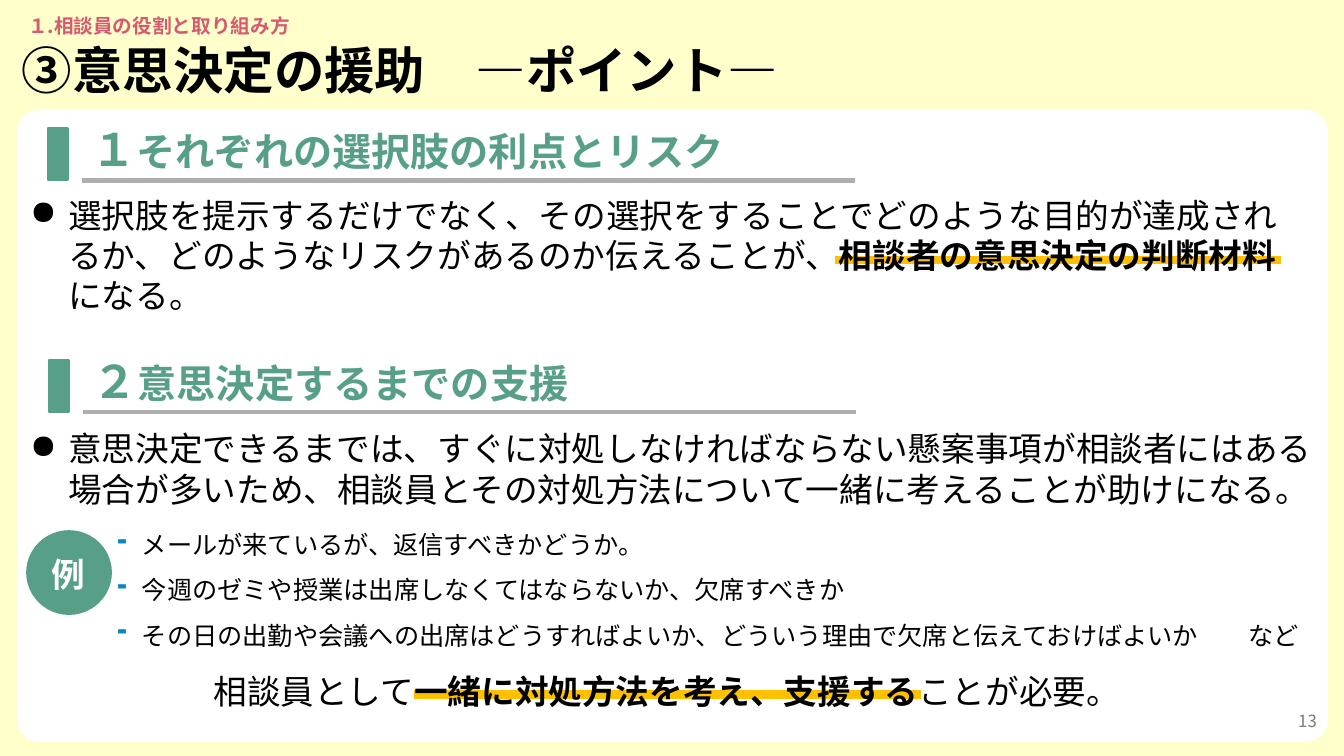
from lxml import etree
from pptx import Presentation
from pptx.dml.color import RGBColor
from pptx.enum.shapes import MSO_CONNECTOR, MSO_SHAPE
from pptx.enum.text import MSO_ANCHOR, MSO_AUTO_SIZE, PP_ALIGN
from pptx.oxml.ns import qn
from pptx.util import Inches, Pt

FONT = "Noto Sans CJK JP"
COLORS = {
    "cream": "FFFFCC", "white": "FFFFFF", "black": "000000", "rose": "D5596F",
    "green": "589F89", "rule": "AEAEAE", "marker": "FFC000", "dash": "0487BA",
    "number": "797979",
}
BODY_LEFT = 0.2
SECTION_GAP = 2.3
SECTION_TOP = 1.16
EXAMPLES = [
    "メールが来ているが、返信すべきかどうか。",
    "今週のゼミや授業は出席しなくてはならないか、欠席すべきか",
    "その日の出勤や会議への出席はどうすればよいか、どういう理由で欠席と伝えておけばよいか\tなど",
]


def color(name):
    return RGBColor.from_string(COLORS[name])


def style(paragraph, size, ink, bold=None):
    """Set the paragraph font, for East Asian glyphs too."""
    font = paragraph.font
    font.size, font.bold, font.name = Pt(size), bold, FONT
    font.color.rgb = color(ink)
    defaults = paragraph._p.pPr.find(qn("a:defRPr"))
    defaults.find(qn("a:latin")).addnext(
        defaults.makeelement(qn("a:ea"), {"typeface": FONT}))


def add_bullet(paragraph, char, indent, ink=None, tab=None):
    props = paragraph._p.get_or_add_pPr()
    props.set("marL", str(Inches(indent)))
    props.set("indent", str(-Inches(indent)))
    if ink:
        tint = etree.SubElement(props, qn("a:buClr"))
        etree.SubElement(tint, qn("a:srgbClr"), val=COLORS[ink])
    etree.SubElement(props, qn("a:buChar"), char=char)
    if tab:
        stops = etree.SubElement(props, qn("a:tabLst"))
        etree.SubElement(stops, qn("a:tab"), pos=str(Inches(tab)), algn="l")


def add_runs(paragraph, parts):
    """Write (text, bold) parts."""
    for text, bold in parts:
        run = paragraph.add_run()
        run.text = text
        if bold:
            run.font.bold = True


def add_text_frame(shapes, box, anchor=MSO_ANCHOR.TOP):
    frame = shapes.add_textbox(*map(Inches, box)).text_frame
    frame.word_wrap = True
    frame.auto_size = MSO_AUTO_SIZE.NONE
    frame.vertical_anchor = anchor
    return frame


def add_label(shapes, box, text, size, ink, bold=None,
              align=PP_ALIGN.LEFT, anchor=MSO_ANCHOR.TOP):
    paragraph = add_text_frame(shapes, box, anchor).paragraphs[0]
    paragraph.text = text
    paragraph.alignment = align
    style(paragraph, size, ink, bold)


def add_block(shapes, kind, box, fill):
    block = shapes.add_shape(kind, *map(Inches, box))
    block.shadow.inherit = False
    block.fill.solid()
    block.fill.fore_color.rgb = color(fill)
    block.line.color.rgb = color(fill)
    block.line.width = Pt(1.5)
    return block


def add_rule(shapes, left, right, y, ink, width):
    rule = shapes.add_connector(
        MSO_CONNECTOR.STRAIGHT, *map(Inches, (left, y, right, y)))
    rule.line.color.rgb = color(ink)
    rule.line.width = Pt(width)
    etree.SubElement(rule._element.spPr, qn("a:effectLst"))


def add_section_heading(slide, left, top, number, title):
    shapes = slide.shapes.add_group_shape().shapes
    height = 0.63
    frame = add_text_frame(shapes, (left, top, 7.21, height), MSO_ANCHOR.MIDDLE)
    frame.margin_left = Inches(0.43)
    heading = frame.paragraphs[0]
    add_runs(heading, [(number, False), (title, False)])
    heading.runs[0].font.size = Pt(32)
    style(heading, 28, "green", True)
    add_block(shapes, MSO_SHAPE.RECTANGLE, (left, top + 0.11, 0.19, 0.52), "green")
    add_rule(shapes, left + 0.33, left + 8, top + height, "rule", 3)


def add_body(slide, box, parts):
    paragraph = add_text_frame(slide.shapes, box).paragraphs[0]
    add_bullet(paragraph, "●", 0.38)
    add_runs(paragraph, parts)
    style(paragraph, 24, "black")


def add_header(slide, left, top):
    add_label(slide.shapes, (left, top + 0.25, 9.13, 0.71),
              "③意思決定の援助　―ポイント―", 36, "black", True)
    add_label(slide.shapes, (left + 0.06, top, 3.6, 0.34),
              "１.相談員の役割と取り組み方", 14, "rose", True)


def add_examples(slide, left, top):
    badge = slide.shapes.add_group_shape().shapes
    add_block(badge, MSO_SHAPE.OVAL, (left, top + 0.22, 0.83, 0.82), "green")
    add_label(badge, (left + 0.09, top + 0.4, 0.64, 0.5), "例", 24, "white",
              True, PP_ALIGN.CENTER)
    frame = add_text_frame(slide.shapes, (left + 0.73, top, 12.17, 1.43))
    for index, example in enumerate(EXAMPLES):
        paragraph = frame.add_paragraph() if index else frame.paragraphs[0]
        paragraph.text = example
        paragraph.line_spacing = 1.5
        add_bullet(paragraph, "╺", 0.31, "dash", 11.28 if "\t" in example else None)
        style(paragraph, 18, "black")


def add_conclusion(slide, left, top):
    add_rule(slide.shapes, left + 2.09, left + 7.11, top + 0.28, "marker", 6)
    paragraph = add_text_frame(slide.shapes, (left, top, 10.2, 0.5)).paragraphs[0]
    paragraph.alignment = PP_ALIGN.JUSTIFY
    paragraph.space_after = Pt(6)
    add_runs(paragraph, [("相談員として", False),
                         ("一緒に対処方法を考え、支援する", True),
                         ("ことが必要。", False)])
    style(paragraph, 24, "black")


def main():
    prs = Presentation()
    prs.slide_width, prs.slide_height = Inches(13.33), Inches(7.5)
    slide = prs.slides.add_slide(prs.slide_layouts[6])
    slide.background.fill.solid()
    slide.background.fill.fore_color.rgb = color("cream")

    panel = add_block(slide.shapes, MSO_SHAPE.ROUNDED_RECTANGLE,
                      (0.18, 1.1, 12.98, 6.25), "white")
    panel.adjustments[0] = 0.033
    add_header(slide, 0.12, 0.09)

    add_section_heading(slide, 0.48, SECTION_TOP,
                        "１", "それぞれの選択肢の利点とリスク")
    add_rule(slide.shapes, 8.28, 12.71, 2.58, "marker", 6)
    add_body(slide, (BODY_LEFT, 1.88, 12.84, 1.31), [
        ("選択肢を提示するだけでなく、その選択をすることでどのような目的が達成されるか、"
         "どのようなリスクがあるのか伝えることが、", False),
        ("相談者の意思決定の判断材料", True), ("になる。", False)])

    add_section_heading(slide, 0.49, SECTION_TOP + SECTION_GAP,
                        "２", "意思決定するまでの支援")
    add_body(slide, (BODY_LEFT, 4.2, 13.08, 0.91), [
        ("意思決定できるまでは、すぐに対処しなければならない懸案事項が相談者にはある"
         "場合が多いため、相談員とその対処方法について一緒に考えることが助けになる。", False)])

    add_examples(slide, 0.27, 5.05)
    add_conclusion(slide, 2.02, 6.61)
    add_label(slide.shapes, (10.16, 6.95, 3, 0.4), "13", 12, "number",
              align=PP_ALIGN.RIGHT, anchor=MSO_ANCHOR.MIDDLE)
    prs.save("out.pptx")


if __name__ == "__main__":
    main()
